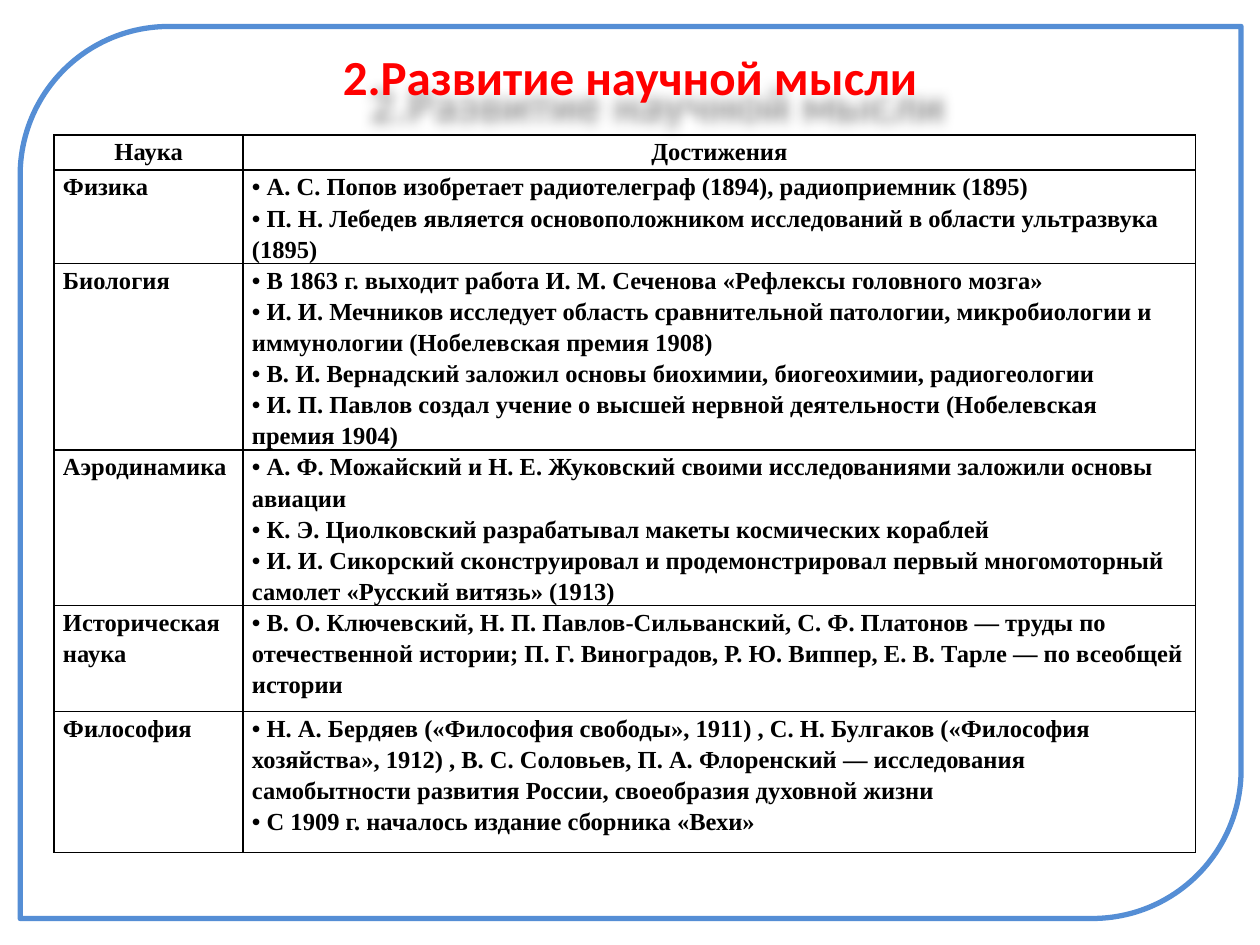
from lxml.etree import SubElement
from pptx import Presentation
from pptx.dml.color import RGBColor
from pptx.enum.shapes import MSO_SHAPE
from pptx.enum.text import MSO_ANCHOR, PP_ALIGN
from pptx.oxml import parse_xml
from pptx.oxml.ns import nsdecls, qn
from pptx.util import Inches, Pt

COLORS = {"frame": "558ED5", "title": "FF0000", "text": "000000", "border": "000000"}
HEADERS = ["Наука", "Достижения"]
SCIENCES = [
    ("Физика", [
        "• А. С. Попов изобретает радиотелеграф (1894), радиоприемник (1895)",
        "• П. Н. Лебедев является основоположником исследований в области ультразвука (1895)",
    ]),
    ("Биология", [
        "• В 1863 г. выходит работа И. М. Сеченова «Рефлексы головного мозга»",
        "• И. И. Мечников исследует область сравнительной патологии, микробиологии и "
        "иммунологии (Нобелевская премия 1908)",
        "• В. И. Вернадский заложил основы биохимии, биогеохимии, радиогеологии",
        "• И. П. Павлов создал учение о высшей нервной деятельности (Нобелевская премия 1904)",
    ]),
    ("Аэродинамика", [
        "• А. Ф. Можайский и Н. Е. Жуковский своими исследованиями заложили основы авиации",
        "• К. Э. Циолковский разрабатывал макеты космических кораблей",
        "• И. И. Сикорский сконструировал и продемонстрировал первый многомоторный "
        "самолет «Русский витязь» (1913)",
    ]),
    ("Историческая наука", [
        "• В. О. Ключевский, Н. П. Павлов-Сильванский, С. Ф. Платонов — труды по "
        "отечественной истории; П. Г. Виноградов, Р. Ю. Виппер, Е. В. Тарле — по "
        "всеобщей истории",
    ]),
    ("Философия", [
        "• Н. А. Бердяев («Философия свободы», 1911) , С. Н. Булгаков («Философия "
        "хозяйства», 1912) , В. С. Соловьев, П. А. Флоренский — исследования "
        "самобытности развития России, своеобразия духовной жизни",
        "• С 1909 г. началось издание сборника «Вехи»",
    ]),
]
COLUMN_WIDTHS = [1.5, 7.56]
ROW_HEIGHTS = [0.28, 0.56, 1.4, 1.12, 0.84, 1.12]


def write_text(text_frame, lines, font="Times New Roman", size=14, color="text",
               align=PP_ALIGN.LEFT, line_spacing=1.15):
    for index, line in enumerate(lines):
        paragraph = text_frame.paragraphs[0] if index == 0 else text_frame.add_paragraph()
        paragraph.alignment = align
        paragraph.line_spacing = line_spacing
        paragraph.space_before = Pt(0)
        run = paragraph.add_run()
        run.text = line
        run.font.name = font
        run.font.size = Pt(size)
        run.font.bold = True
        run.font.color.rgb = RGBColor.from_string(COLORS[color])


class SlideBuilder:
    def __init__(self, slide):
        self.slide = slide
        self.border_width = Pt(1)
        self.cell_margin = Inches(0.07)

    def add_frame(self, left, top, width, height):
        shape = self.slide.shapes.add_shape(
            MSO_SHAPE.ROUND_2_DIAG_RECTANGLE,
            Inches(left), Inches(top), Inches(width), Inches(height))
        shape.shadow.inherit = False
        shape.fill.background()
        shape.line.color.rgb = RGBColor.from_string(COLORS["frame"])
        shape.line.width = Pt(3)

    def add_title(self, text, left, top, width, height):
        title = self.slide.shapes.title
        title.left, title.top = Inches(left), Inches(top)
        title.width, title.height = Inches(width), Inches(height)
        title.text_frame.vertical_anchor = MSO_ANCHOR.MIDDLE
        title.text_frame.word_wrap = True
        write_text(title.text_frame, [text], font="Calibri", size=28, color="title",
                   align=PP_ALIGN.CENTER, line_spacing=1)
        title.element.spPr.append(parse_xml(
            f'<a:effectLst {nsdecls("a")}>'
            f'<a:outerShdw blurRad="{Inches(0.1)}" dist="{Inches(0.29)}" dir="2700000" '
            'algn="tl" rotWithShape="0"><a:srgbClr val="000000"><a:alpha val="40000"/>'
            '</a:srgbClr></a:outerShdw></a:effectLst>'))

    def add_table(self, left, top):
        table = self.slide.shapes.add_table(
            len(ROW_HEIGHTS), len(COLUMN_WIDTHS), Inches(left), Inches(top),
            Inches(sum(COLUMN_WIDTHS)), Inches(sum(ROW_HEIGHTS))).table
        table.first_row = False
        table.horz_banding = False
        for column, width in zip(table.columns, COLUMN_WIDTHS):
            column.width = Inches(width)
        for row, height in zip(table.rows, ROW_HEIGHTS):
            row.height = Inches(height)
        for cell, header in zip(table.rows[0].cells, HEADERS):
            self.fill_cell(cell, [header], align=PP_ALIGN.CENTER)
        for row_index, (science, achievements) in enumerate(SCIENCES, start=1):
            self.fill_cell(table.cell(row_index, 0), [science])
            self.fill_cell(table.cell(row_index, 1), achievements)

    def fill_cell(self, cell, lines, **text_format):
        cell.margin_left = cell.margin_right = self.cell_margin
        cell.margin_top = cell.margin_bottom = 0
        write_text(cell.text_frame, lines, **text_format)
        properties = cell._tc.get_or_add_tcPr()
        for side in ("lnL", "lnR", "lnT", "lnB"):
            border = SubElement(properties, qn(f"a:{side}"), w=str(self.border_width))
            fill = SubElement(border, qn("a:solidFill"))
            SubElement(fill, qn("a:srgbClr"), val=COLORS["border"])
        cell.fill.background()


def main():
    presentation = Presentation()
    presentation.slide_width = Inches(10)
    presentation.slide_height = Inches(7.5)
    builder = SlideBuilder(presentation.slides.add_slide(presentation.slide_layouts[5]))
    builder.add_frame(0.16, 0.21, 9.69, 7.08)
    builder.add_title("2.Развитие научной мысли", 0.5, 0.3, 9, 0.61)
    builder.add_table(0.43, 1.07)
    presentation.save("out.pptx")


if __name__ == "__main__":
    main()
